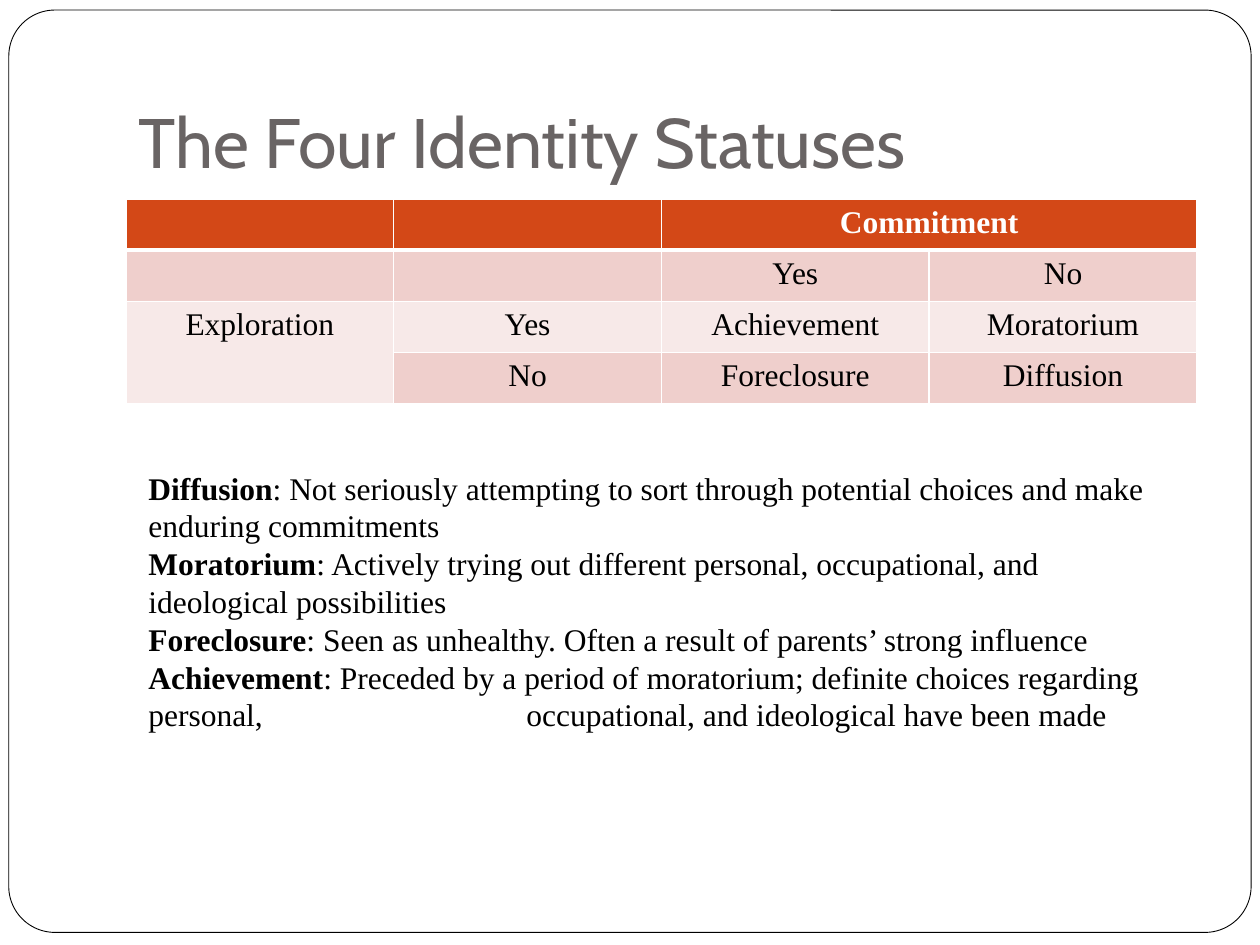
from dataclasses import dataclass

from lxml.etree import SubElement
from pptx import Presentation
from pptx.dml.color import RGBColor as RGB
from pptx.enum.shapes import MSO_SHAPE as Shape
from pptx.enum.text import MSO_ANCHOR as Anchor, MSO_AUTO_SIZE as AutoSize, PP_ALIGN as Align
from pptx.oxml import parse_xml
from pptx.oxml.ns import nsdecls, qn
from pptx.util import Inches, Pt


@dataclass(frozen=True)
class Theme:
    black: RGB = RGB(0x00, 0x00, 0x00)
    white: RGB = RGB(0xFF, 0xFF, 0xFF)
    title: RGB = RGB(0x69, 0x64, 0x64)
    header: RGB = RGB(0xD3, 0x48, 0x17)
    dark_band: RGB = RGB(0xEF, 0xCF, 0xCC)
    light_band: RGB = RGB(0xF7, 0xE9, 0xE8)
    title_font: str = "Cabin"
    body_font: str = "Times New Roman"
    title_size: Pt = Pt(40)
    body_size: Pt = Pt(18)


theme = Theme()


def add_run(paragraph, text, color=theme.black, bold=False,
            font=theme.body_font, size=theme.body_size):
    run = paragraph.add_run()
    run.text = text
    run.font.name, run.font.size, run.font.bold = font, size, bold
    run.font.color.rgb = color


def set_borders(cell, bottom):
    """Draw white cell borders, which must precede the fill in tcPr."""
    widths = {"lnL": Pt(1), "lnR": Pt(1), "lnT": Pt(1), "lnB": bottom}
    for position, (side, width) in enumerate(widths.items()):
        cell._tc.get_or_add_tcPr().insert(position, parse_xml(
            f'<a:{side} {nsdecls("a")} w="{width}"><a:solidFill>'
            f'<a:srgbClr val="{theme.white}"/></a:solidFill></a:{side}>'))


prs = Presentation()
prs.slide_width, prs.slide_height = Inches(10), Inches(7.5)
slide = prs.slides.add_slide(prs.slide_layouts[5])
shapes = slide.shapes

# Rounded page frame, sent behind the title
frame = shapes.add_shape(Shape.ROUNDED_RECTANGLE,
                         Inches(0.07), Inches(0.08), Inches(9.86), Inches(7.32))
frame.adjustments[0] = 0.05
frame.shadow.inherit = False
frame.fill.solid()
frame.fill.fore_color.rgb = theme.white
frame.line.color.rgb = theme.black
frame.line.width = Pt(0.5)
shapes._spTree.insert(2, frame._element)

# Title
title = shapes.title
title.left, title.top, title.width, title.height = (
    Inches(1), Inches(0.3), Inches(8.5), Inches(1.25))
heading = title.text_frame
heading.auto_size = AutoSize.NONE
heading.vertical_anchor = Anchor.BOTTOM
heading.margin_bottom = Inches(0.1)
heading.paragraphs[0].alignment = Align.LEFT
add_run(heading.paragraphs[0], "The Four Identity Statuses", theme.title,
        font=theme.title_font, size=theme.title_size)

# Commitment by exploration table
STATUSES = [
    ["", "", "Commitment", ""],
    ["", "", "Yes", "No"],
    ["Exploration", "Yes", "Achievement", "Moratorium"],
    ["", "No", "Foreclosure", "Diffusion"],
]
BANDS = [theme.header, theme.dark_band, theme.light_band, theme.dark_band]
statuses = shapes.add_table(4, 4, Inches(1), Inches(1.58),
                            Inches(8.5), Inches(1.62)).table
statuses.cell(0, 2).merge(statuses.cell(0, 3))
statuses.cell(2, 0).merge(statuses.cell(3, 0))
for row, (labels, band) in enumerate(zip(STATUSES, BANDS)):
    is_header = row == 0
    for column, label in enumerate(labels):
        cell = statuses.cell(row, column)
        cell.fill.solid()
        cell.fill.fore_color.rgb = band
        set_borders(cell, bottom=Pt(3) if is_header else Pt(1))
        if label:
            paragraph = cell.text_frame.paragraphs[0]
            paragraph.alignment = Align.CENTER
            add_run(paragraph, label, theme.white if is_header else theme.black, is_header)

# Definitions
DEFINITIONS = {
    "Diffusion": "Not seriously attempting to sort through potential choices "
                 "and make enduring commitments",
    "Moratorium": "Actively trying out different personal, occupational, "
                  "and ideological possibilities",
    "Foreclosure": "Seen as unhealthy. Often a result of parents’ strong influence",
    "Achievement": "Preceded by a period of moratorium; definite choices regarding "
                   "personal,\toccupational, and ideological have been made",
}
definitions = shapes.add_textbox(Inches(1.08), Inches(3.67),
                                 Inches(8.33), Inches(2.22)).text_frame
definitions.word_wrap = True
definitions.auto_size = AutoSize.SHAPE_TO_FIT_TEXT
for index, (status, meaning) in enumerate(DEFINITIONS.items()):
    paragraph = definitions.add_paragraph() if index else definitions.paragraphs[0]
    tab_stops = SubElement(paragraph._p.get_or_add_pPr(), qn("a:tabLst"))
    SubElement(tab_stops, qn("a:tab"), pos=str(Inches(3)), algn="l")
    add_run(paragraph, status, bold=True)
    add_run(paragraph, f": {meaning}")

prs.save("out.pptx")
